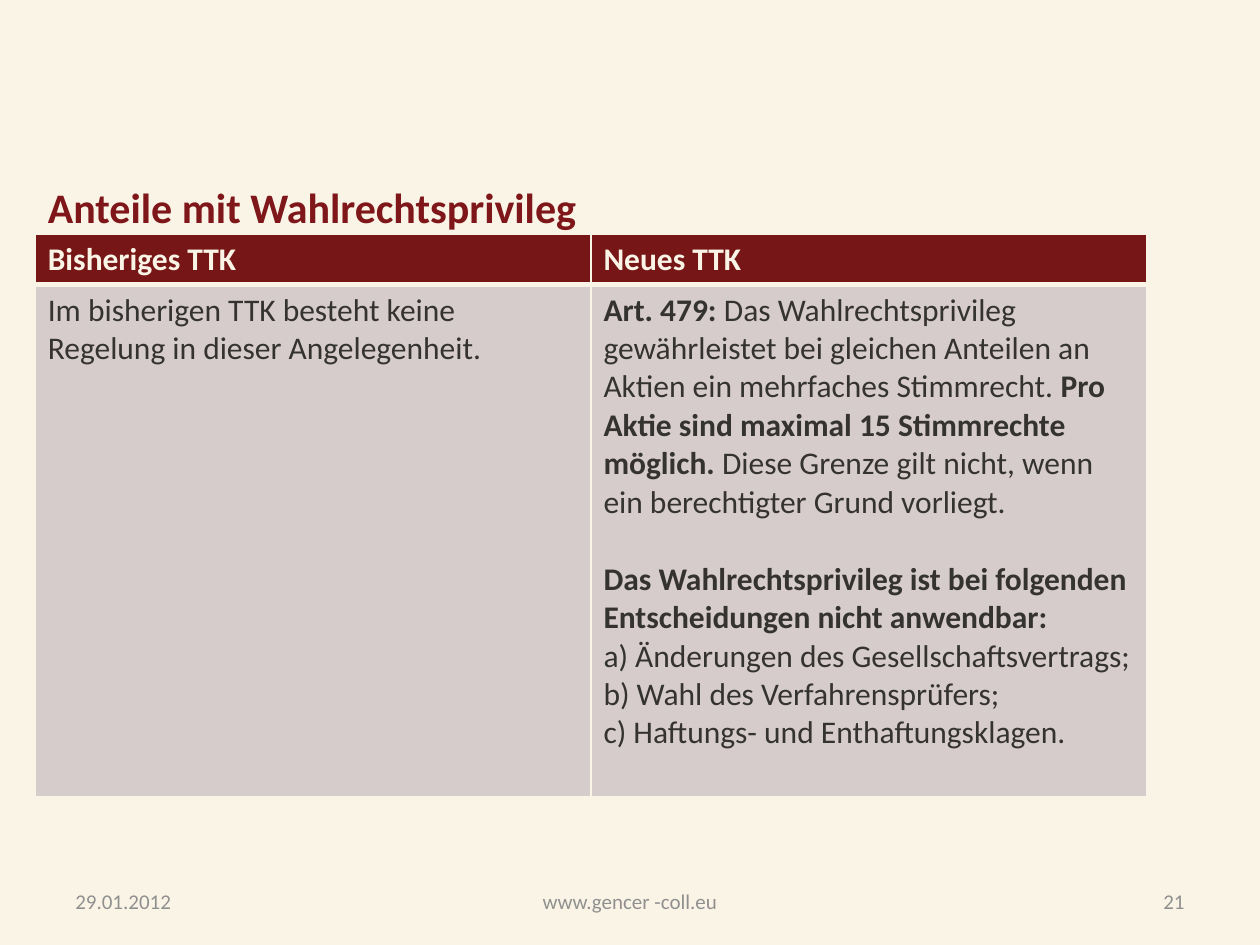
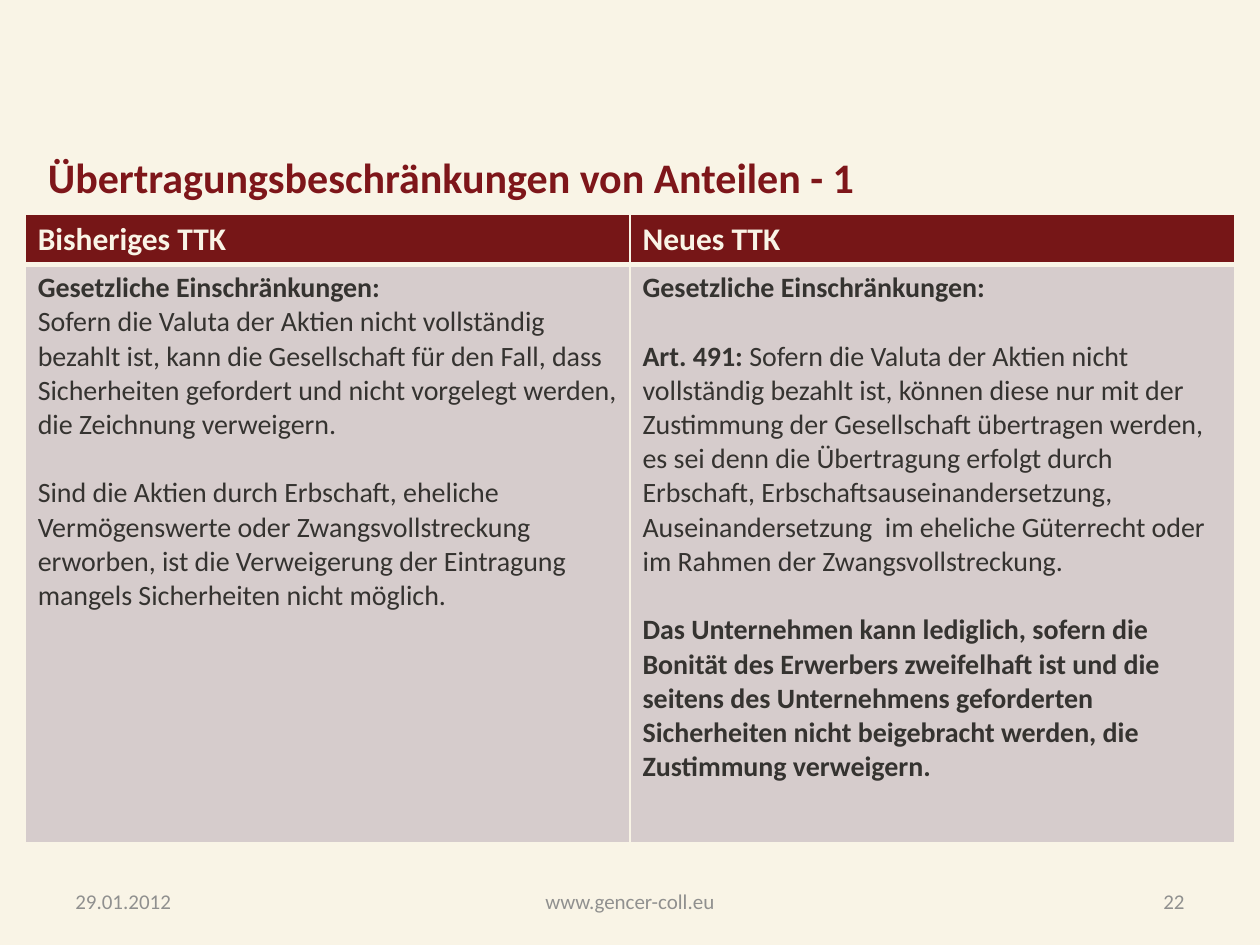
"""Build two slides that compare the former and the new TTK in tables."""
from lxml.etree import SubElement
from pptx import Presentation
from pptx.dml.color import RGBColor
from pptx.enum.text import MSO_ANCHOR, PP_ALIGN
from pptx.oxml.ns import qn
from pptx.util import Emu, Inches, Pt

CREAM, RED, DARK = "F9F4E6", "7E161A", "761617"
INK, ROSE, GREY = "353330", "D6CCCC", "90908F"
FONT, LINE = "Calibri", 1.22
HEADS = ["Bisheriges TTK", "Neues TTK"]
HEAD_H = 0.4
DATE = "29.01.2012"

# Each cell is a list of blocks, each block a list of paragraphs; ** marks bold.
SLIDES = [
    dict(
        title="Anteile mit Wahlrechtsprivileg", top=1.39,
        site="www.gencer -coll.eu", page="21",
        grid=(0.28, 1.86), col=4.41, body=4.06, size=18,
        cells=[
            [["Im bisherigen TTK besteht keine Regelung in dieser Angelegenheit."]],
            [["**Art. 479: **Das Wahlrechtsprivileg gewährleistet bei gleichen "
              "Anteilen an Aktien ein mehrfaches Stimmrecht. **Pro Aktie sind "
              "maximal 15 Stimmrechte möglich. **Diese Grenze gilt nicht, wenn "
              "ein berechtigter Grund vorliegt."],
             ["**Das Wahlrechtsprivileg ist bei folgenden Entscheidungen nicht "
              "anwendbar:**",
              "a) Änderungen des Gesellschaftsvertrags;",
              "b) Wahl des Verfahrensprüfers;",
              "c) Haftungs- und Enthaftungsklagen."]],
        ]),
    dict(
        title="Übertragungsbeschränkungen von Anteilen - 1", top=1.15,
        site="www.gencer-coll.eu", page="22",
        grid=(0.2, 1.7), col=4.8, body=4.59, size=16,
        cells=[
            [["**Gesetzliche Einschränkungen:**",
              "Sofern die Valuta der Aktien nicht vollständig bezahlt ist, kann "
              "die Gesellschaft für den Fall, dass Sicherheiten gefordert und "
              "nicht vorgelegt werden, die Zeichnung verweigern."],
             ["Sind die Aktien durch Erbschaft, eheliche Vermögenswerte oder "
              "Zwangsvollstreckung erworben, ist die Verweigerung der Eintragung "
              "mangels Sicherheiten nicht möglich."]],
            [["**Gesetzliche Einschränkungen:**"],
             ["**Art. 491: **Sofern die Valuta der Aktien nicht vollständig "
              "bezahlt ist, können diese nur mit der Zustimmung der Gesellschaft "
              "übertragen werden, es sei denn die Übertragung erfolgt durch "
              "Erbschaft, Erbschaftsauseinandersetzung, Auseinandersetzung  im "
              "eheliche Güterrecht oder im Rahmen der Zwangsvollstreckung."],
             ["**Das Unternehmen kann lediglich, sofern die Bonität des Erwerbers "
              "zweifelhaft ist und die seitens des Unternehmens geforderten "
              "Sicherheiten nicht beigebracht werden, die Zustimmung "
              "verweigern.**"]],
        ]),
]


def tint(code):
    return RGBColor.from_string(code)


def style(para, size, color, bold=False, align=PP_ALIGN.LEFT):
    para.alignment = align
    font = para.font
    font.name, font.size, font.bold = FONT, Pt(size), bold
    font.color.rgb = tint(color)


def write(para, text, size, color):
    parts = [(part, i % 2 == 1) for i, part in enumerate(text.split("**")) if part]
    mixed = len(parts) > 1
    style(para, size, color, bold=not mixed and parts[0][1])
    for part, bold in parts:
        run = para.add_run()
        run.text = part
        if mixed:
            run.font.bold = bold


def paint(cell, color, top, bottom):
    props = cell._tc.get_or_add_tcPr()
    for side, width in zip("LRTB", (1, 1, top, bottom)):
        edge = SubElement(props, qn("a:ln" + side), w=str(Pt(width)))
        fill = SubElement(edge, qn("a:solidFill"))
        SubElement(fill, qn("a:srgbClr"), val=CREAM)
    cell.fill.solid()
    cell.fill.fore_color.rgb = tint(color)


def fill_cell(cell, blocks, size):
    frame = cell.text_frame
    for b, block in enumerate(blocks):
        for p, text in enumerate(block):
            first = b == p == 0
            para = frame.paragraphs[0] if first else frame.add_paragraph()
            write(para, text, size, INK)
            if b and not p:
                para.space_before = Pt(size * LINE)


def add_title(slide, text, top):
    title = slide.shapes.title
    title.left, title.top = Inches(0.28), Inches(top)
    title.width, title.height = Inches(7.87), Inches(0.47)
    frame = title.text_frame
    frame.text = text
    frame.vertical_anchor = MSO_ANCHOR.TOP
    style(frame.paragraphs[0], 24, RED, bold=True)


def add_grid(slide, data):
    left, top = data["grid"]
    col, body = data["col"], data["body"]
    grid = slide.shapes.add_table(
        2, 2, Inches(left), Inches(top), Inches(2 * col), Inches(HEAD_H + body)).table
    grid.rows[0].height, grid.rows[1].height = Inches(HEAD_H), Inches(body)
    for c, (head, blocks) in enumerate(zip(HEADS, data["cells"])):
        grid.columns[c].width = Inches(col)
        upper, lower = grid.cell(0, c), grid.cell(1, c)
        write(upper.text_frame.paragraphs[0], f"**{head}**", 18, CREAM)
        fill_cell(lower, blocks, data["size"])
        paint(upper, DARK, 1, 3)
        paint(lower, ROSE, 3, 1)


def add_foot(slide, data, wide):
    side, mid = Inches(2.33), Inches(3.17)
    edge = Inches(0.5)
    for text, left, width, align in (
            (DATE, edge, side, PP_ALIGN.LEFT),
            (data["site"], Emu((wide - mid) // 2), mid, PP_ALIGN.CENTER),
            (data["page"], wide - edge - side, side, PP_ALIGN.RIGHT)):
        box = slide.shapes.add_textbox(left, Inches(6.95), width, Inches(0.4))
        frame = box.text_frame
        frame.word_wrap = True
        frame.vertical_anchor = MSO_ANCHOR.MIDDLE
        frame.text = text
        style(frame.paragraphs[0], 12, GREY, align=align)


def main():
    prs = Presentation()
    prs.slide_width, prs.slide_height = Inches(10), Inches(7.5)
    back = prs.slide_master.background.fill
    back.solid()
    back.fore_color.rgb = tint(CREAM)
    for data in SLIDES:
        slide = prs.slides.add_slide(prs.slide_layouts.get_by_name("Title Only"))
        add_foot(slide, data, prs.slide_width)
        add_title(slide, data["title"], data["top"])
        add_grid(slide, data)
    prs.save("out.pptx")


if __name__ == "__main__":
    main()
